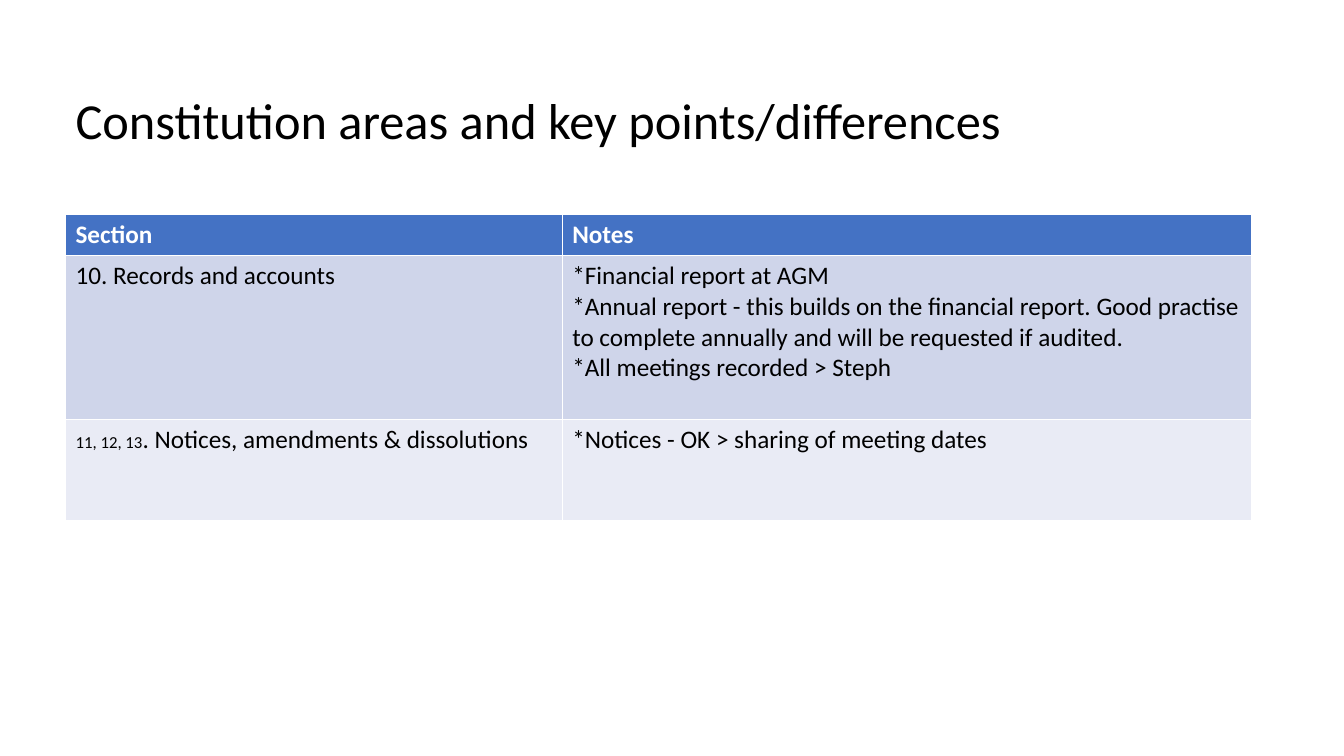
import pptx
import pptx.util
import pptx.dml.color
import pptx.enum.text

Cm, Pt = pptx.util.Cm, pptx.util.Pt
FONT = "Calibri"
COLORS = {"text": "000000", "header_text": "FFFFFF", "header": "4472C4",
          "band_dark": "CFD5EA", "band_light": "E9EBF5"}

COLUMN_WIDTHS = [12.52, 17.37]
ROW_HEIGHTS = [1.04, 4.14, 2.54]
ROW_FILLS = ["header", "band_dark", "band_light"]
# Each cell is a list of paragraphs, each paragraph a list of (text, size) runs
ROWS = [
    [[[("Section", 18)]],
     [[("Notes", 18)]]],
    [[[("10. Records and accounts", 18)]],
     [[("*Financial report at AGM", 18)],
      [("*Annual report - this builds on the financial report. Good practise "
        "to complete annually and will be requested if audited.", 18)],
      [("*All meetings recorded > Steph", 18)]]],
    [[[("11, 12, 13", 12), (". Notices, amendments & dissolutions", 18)]],
     [[("*Notices - OK > sharing of meeting dates", 18)]]],
]


def rgb(name):
    return pptx.dml.color.RGBColor.from_string(COLORS[name])


def add_run(p, text, size, color, bold=False):
    r = p.add_run()
    r.text = text
    r.font.name = FONT
    r.font.size = Pt(size)
    r.font.bold = bold
    r.font.color.rgb = rgb(color)


def fill_title(s, left, top, width, height):
    sp = s.shapes.title
    sp.left, sp.top, sp.width, sp.height = left, top, width, height
    tf = sp.text_frame
    tf.word_wrap = True
    tf.vertical_anchor = pptx.enum.text.MSO_ANCHOR.MIDDLE
    p = tf.paragraphs[0]
    p.alignment = pptx.enum.text.PP_ALIGN.LEFT
    p.line_spacing = 0.9
    add_run(p, "Constitution areas and key points/differences", 36, "text")


def fill_cell(cell, paragraphs, fill, is_header):
    cell.fill.solid()
    cell.fill.fore_color.rgb = rgb(fill)
    tf = cell.text_frame
    for i, runs in enumerate(paragraphs):
        p = tf.add_paragraph() if i else tf.paragraphs[0]
        for text, size in runs:
            add_run(p, text, size, "header_text" if is_header else "text", is_header)


def add_sections_table(s, left, top, width, height):
    table = s.shapes.add_table(len(ROWS), len(COLUMN_WIDTHS),
                               left, top, width, height).table
    for column, share in zip(table.columns, COLUMN_WIDTHS):
        column.width = int(width * share / sum(COLUMN_WIDTHS))
    for row, share in zip(table.rows, ROW_HEIGHTS):
        row.height = int(height * share / sum(ROW_HEIGHTS))
    for i, (cells, fill) in enumerate(zip(ROWS, ROW_FILLS)):
        for j, paragraphs in enumerate(cells):
            fill_cell(table.cell(i, j), paragraphs, fill, i == 0)


def main():
    prs = pptx.Presentation()
    prs.slide_width, prs.slide_height = Cm(33.87), Cm(19.05)
    s = prs.slides.add_slide(prs.slide_layouts[5])
    # Title
    fill_title(s, Cm(1.65), Cm(1.27), Cm(29.21), Cm(3.68))
    # Sections and notes
    add_sections_table(s, Cm(1.65), Cm(5.4), Cm(sum(COLUMN_WIDTHS)), Cm(sum(ROW_HEIGHTS)))
    prs.save("out.pptx")


if __name__ == "__main__":
    main()
